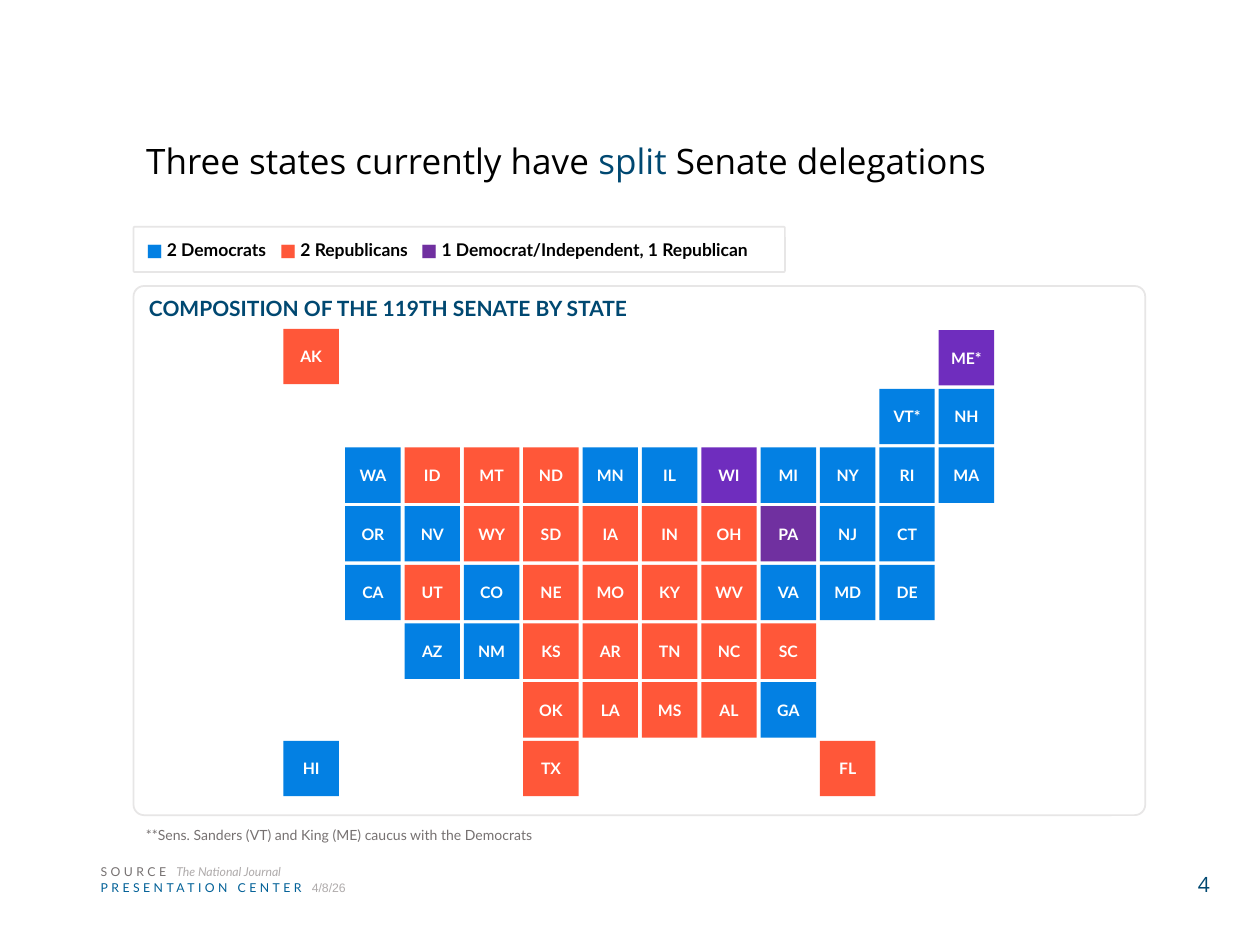
from lxml.etree import SubElement
from pptx import Presentation
from pptx.dml.color import RGBColor
from pptx.enum.shapes import MSO_SHAPE as SHAPE
from pptx.enum.text import MSO_ANCHOR as ANCHOR, PP_ALIGN as ALIGN
from pptx.oxml.ns import qn
from pptx.util import Pt

PX = 9144  # 100 px to the inch
C = {
    "dem": "0380E3", "rep": "FF5739", "split": "6F2DBE", "purple": "7030A0",
    "navy": "004871", "teal": "006097", "gray": "767171", "light": "AFABAB",
    "border": "E7E6E6", "black": "000000", "white": "FFFFFF",
}


def write(tf, runs, size, font="Lato", bold=False, align=ALIGN.LEFT, anchor=ANCHOR.TOP):
    """Fill the first paragraph with (text, colour) runs and return it."""
    tf.word_wrap = True
    tf.vertical_anchor = anchor
    p = tf.paragraphs[0]
    p.alignment = align
    for text, color in runs:
        r = p.add_run()
        r.text = text
        r.font.size, r.font.name, r.font.bold = Pt(size), font, bold
        r.font.color.rgb = RGBColor.from_string(C[color])
    return p


def add_box(shapes, kind, x, y, w, h, fill=None, line=None):
    sp = shapes.add_shape(kind, *(round(v * PX) for v in (x, y, w, h)))
    sp.shadow.inherit = False
    if fill:
        sp.fill.solid()
        sp.fill.fore_color.rgb = RGBColor.from_string(C[fill])
    else:
        sp.fill.background()
    if line:
        sp.line.color.rgb = RGBColor.from_string(C[line])
        sp.line.width = Pt(1)
    else:
        sp.line.fill.background()
    return sp


prs = Presentation()
prs.slide_width, prs.slide_height = 1000 * PX, 750 * PX
s = prs.slides.add_slide(prs.slide_layouts[5])

# Title
title = s.shapes.title
title.left, title.top, title.width, title.height = 106 * PX, 90 * PX, 803 * PX, 79 * PX
p = write(title.text_frame,
          [("Three states currently have ", "black"), ("split", "navy"),
           (" Senate delegations", "black")],
          20, "Open Sans", anchor=ANCHOR.MIDDLE)
p.line_spacing = 0.9

# Map panel and legend
panel = add_box(s.shapes, SHAPE.ROUNDED_RECTANGLE, 106, 227, 803, 420, line="border")
panel.adjustments[0] = 0.02
write(panel.text_frame, [("COMPOSITION OF THE 119TH SENATE BY STATE", "navy")], 12, bold=True)

legend = add_box(s.shapes, SHAPE.ROUNDED_RECTANGLE, 106, 180, 517, 36, line="border")
legend.adjustments[0] = 0.03
p = write(legend.text_frame,
          [("■", "dem"), (" 2 Democrats\t", "black"),
           ("■", "rep"), (" 2 Republicans\t", "black"),
           ("■", "purple"), (" 1 Democrat/Independent, 1 Republican", "black")],
          10, bold=True, anchor=ANCHOR.MIDDLE)
tabs = SubElement(p._p.get_or_add_pPr(), qn("a:tabLst"))
for stop in (106, 218):
    SubElement(tabs, qn("a:tab"), pos=str(stop * PX), algn="l")

# State tiles: one row per line, "." is an empty cell
TILE, LEFT, TOP = 44, 274, 262
STEP_X, STEP_Y = 47.1, 46.57
ROWS = """
.  .  .  .  .  .  .  .  .  .   ME*
.  .  .  .  .  .  .  .  .  VT* NH
WA ID MT ND MN IL WI MI NY RI  MA
OR NV WY SD IA IN OH PA NJ CT  .
CA UT CO NE MO KY WV VA MD DE  .
.  AZ NM KS AR TN NC SC .  .   .
.  .  .  OK LA MS AL GA .  .   .
.  .  .  TX .  .  .  .  FL .   .
""".strip().splitlines()
DEM = "VT* NH WA MN IL MI NY RI MA OR NV NJ CT CA CO VA MD DE AZ NM GA HI".split()
PARTY = {**dict.fromkeys(DEM, "dem"), "ME*": "split", "WI": "split", "PA": "purple"}

tiles = [(state, LEFT + col * STEP_X, TOP + row * STEP_Y)
         for row, line in enumerate(ROWS)
         for col, state in enumerate(line.split()) if state != "."]
tiles += [("AK", 225, 261), ("HI", 225, 588)]
state_map = s.shapes.add_group_shape()
for state, x, y in tiles:
    sp = add_box(state_map.shapes, SHAPE.RECTANGLE, x, y, TILE, TILE,
                 fill=PARTY.get(state, "rep"))
    tf = sp.text_frame
    tf.margin_left = tf.margin_right = 0
    write(tf, [(state, "white")], 9, bold=True, align=ALIGN.CENTER, anchor=ANCHOR.MIDDLE)

# Footnote, source lines and page number
notes = [
    (106, 651, 803, 24, 8,
     [("**Sens. Sanders (VT) and King (ME) caucus with the Democrats", "gray")]),
    (70, 681, 377, 22, 7, [("SOURCE ", "gray"), ("The National Journal", "light")]),
    (70, 694, 294, 22, 7, [("PRESENTATION CENTER ", "teal"), ("4/8/26", "light")]),
]
paragraphs = []
for x, y, w, h, size, runs in notes:
    tb = s.shapes.add_textbox(x * PX, y * PX, w * PX, h * PX)
    paragraphs.append(write(tb.text_frame, runs, size))
footnote, source, center = paragraphs
for p in (source, center):
    p.runs[0]._r.get_or_add_rPr().set("spc", "200")
source.runs[1].font.italic = True
center.runs[1].font.name = "Arial"

number = s.shapes.add_textbox(911 * PX, 682 * PX, 89 * PX, 40 * PX)
write(number.text_frame, [("4", "navy")], 12, "Open Sans",
      align=ALIGN.CENTER, anchor=ANCHOR.MIDDLE)

prs.save("out.pptx")
